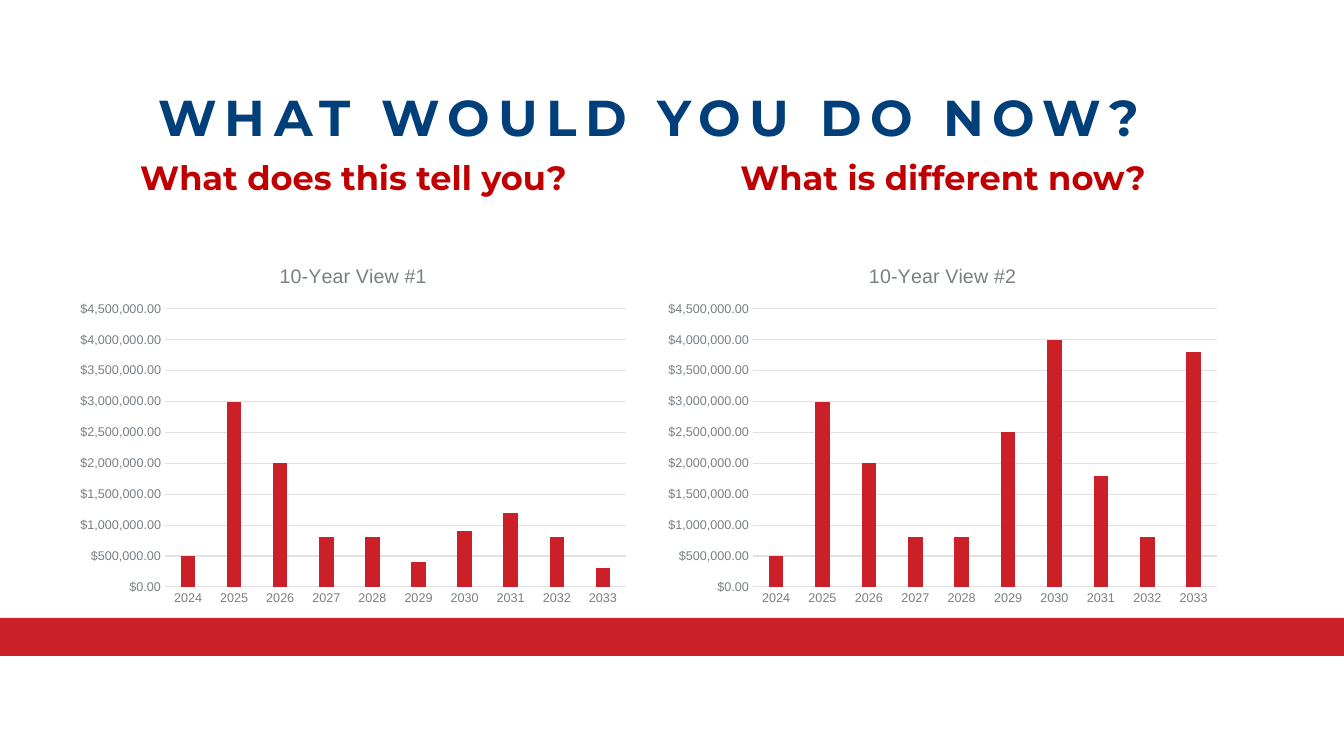
from lxml import etree
from pptx import Presentation
from pptx.chart.data import CategoryChartData as ChartData
from pptx.dml.color import RGBColor
from pptx.enum.chart import XL_CHART_TYPE as Kind, XL_TICK_MARK as Tick
from pptx.enum.shapes import MSO_SHAPE as Shape
from pptx.enum.text import MSO_ANCHOR as Anchor, PP_ALIGN as Align
from pptx.oxml import parse_xml
from pptx.oxml.ns import nsdecls, qn
from pptx.util import Emu, Pt

TITLE = "WHAT WOULD YOU DO NOW?"
YEARS = [str(year) for year in range(2024, 2034)]
VIEWS = [
    {"ask": "What does this tell you?", "name": "10-Year View #1",
     "left": 69, "width": 569,
     "vals": [500000, 3000000, 2000000, 800000, 800000,
              400000, 900000, 1200000, 800000, 300000]},
    {"ask": "What is different now?", "name": "10-Year View #2",
     "left": 657, "width": 572,
     "vals": [500000, 3000000, 2000000, 800000, 800000,
              2500000, 4000000, 1800000, 800000, 3800000]},
]
MONEY = '"$"#,##0.00'

NAVY = RGBColor(0x01, 0x3F, 0x7A)
CRIMSON = RGBColor(0xC0, 0x00, 0x00)
RED = RGBColor(0xCB, 0x20, 0x27)
GRAY = RGBColor(0x78, 0x7F, 0x84)
PALE = RGBColor(0xE0, 0xE1, 0xE3)

WIDE, HIGH = 1344, 756
CHART_TOP, CHART_HIGH = 247, 366
PLOT_LEFT, PLOT_TOP, PLOT_RIGHT, PLOT_HIGH = 96, 62, 12, 278
NAME_WIDE, NAME_TOP = 155, 13


def px(count):
    return Emu(round(count * 914400 / 100.8))


def add_text(slide, box, text, size, color, inset=0, anchor=Anchor.TOP):
    frame = slide.shapes.add_textbox(*map(px, box)).text_frame
    frame.word_wrap = True
    frame.vertical_anchor = anchor
    frame.margin_left = frame.margin_right = px(inset)
    frame.margin_top = frame.margin_bottom = px(inset / 2)
    para = frame.paragraphs[0]
    para.alignment = Align.CENTER
    run = para.add_run()
    run.text = text
    style(run.font, size, color, "Montserrat", True)
    return para, run


def style(font, size, color, face="Arial", bold=False):
    font.name, font.size, font.bold = face, Pt(size), bold
    font.color.rgb = color


def place(node, after, target, **parts):
    """Fix a chart part at fractions of the chart area."""
    for old in node.findall(qn("c:layout")):
        node.remove(old)
    layout = parse_xml(f"<c:layout {nsdecls('c')}/>")
    manual = etree.SubElement(layout, qn("c:manualLayout"))
    if target:
        etree.SubElement(manual, qn("c:layoutTarget")).set("val", target)
    for key in ("x", "y"):
        etree.SubElement(manual, qn(f"c:{key}Mode")).set("val", "edge")
    for key, part in parts.items():
        etree.SubElement(manual, qn(f"c:{key}")).set("val", f"{part:.4f}")
    node.insert(after, layout)


def add_view(slide, view):
    data = ChartData(number_format=MONEY)
    data.categories = YEARS
    data.add_series("Series 1", view["vals"])
    wide = view["width"]
    box = (view["left"], CHART_TOP, wide, CHART_HIGH)
    chart = slide.shapes.add_chart(
        Kind.COLUMN_CLUSTERED, *map(px, box), data).chart
    chart.has_legend = False
    style(chart.font, 10, GRAY)

    chart.has_title = True
    run = chart.chart_title.text_frame.paragraphs[0].add_run()
    run.text = view["name"]
    style(run.font, 14, GRAY)
    chart.chart_title.include_in_layout = False

    plot = chart.plots[0]
    plot.gap_width, plot.overlap = 219, -27
    plot.vary_by_categories = False
    fill = plot.series[0].format.fill
    fill.solid()
    fill.fore_color.rgb = RED

    years, money = chart.category_axis, chart.value_axis
    for axis in (years, money):
        axis.major_tick_mark = axis.minor_tick_mark = Tick.NONE
        style(axis.tick_labels.font, 9, GRAY)
    years.has_major_gridlines = False
    money.has_major_gridlines = True
    for line in (years.format.line, money.major_gridlines.format.line):
        line.color.rgb = PALE
        line.width = Pt(0.75)
    money.format.line.fill.background()
    money.minimum_scale, money.maximum_scale = 0, 4500000
    money.major_unit = 500000
    money.tick_labels.number_format = MONEY
    money.tick_labels.number_format_is_linked = False

    root = chart.element.find(qn("c:chart"))
    place(root.find(qn("c:title")), 1, None,
          x=(wide - NAME_WIDE) / 2 / wide, y=NAME_TOP / CHART_HIGH)
    place(root.find(qn("c:plotArea")), 0, "inner",
          x=PLOT_LEFT / wide, y=PLOT_TOP / CHART_HIGH,
          w=(wide - PLOT_LEFT - PLOT_RIGHT) / wide, h=PLOT_HIGH / CHART_HIGH)


def main():
    deck = Presentation()
    deck.slide_width, deck.slide_height = px(WIDE), px(HIGH)
    slide = deck.slides.add_slide(deck.slide_layouts[6])

    band = slide.shapes.add_shape(
        Shape.RECTANGLE, *map(px, (0, 618, WIDE, 38)))
    band.shadow.inherit = False
    band.fill.solid()
    band.fill.fore_color.rgb = RED
    band.line.fill.background()

    para, run = add_text(slide, (70, 85, 1159, 71), TITLE, 36, NAVY,
                         10, Anchor.MIDDLE)
    para.line_spacing = 0.9
    run.font._element.set("spc", "600")

    for view in VIEWS:
        add_text(slide, (view["left"], 157, view["width"], 90),
                 view["ask"], 24, CRIMSON)
        add_view(slide, view)
    deck.save("out.pptx")


if __name__ == "__main__":
    main()
